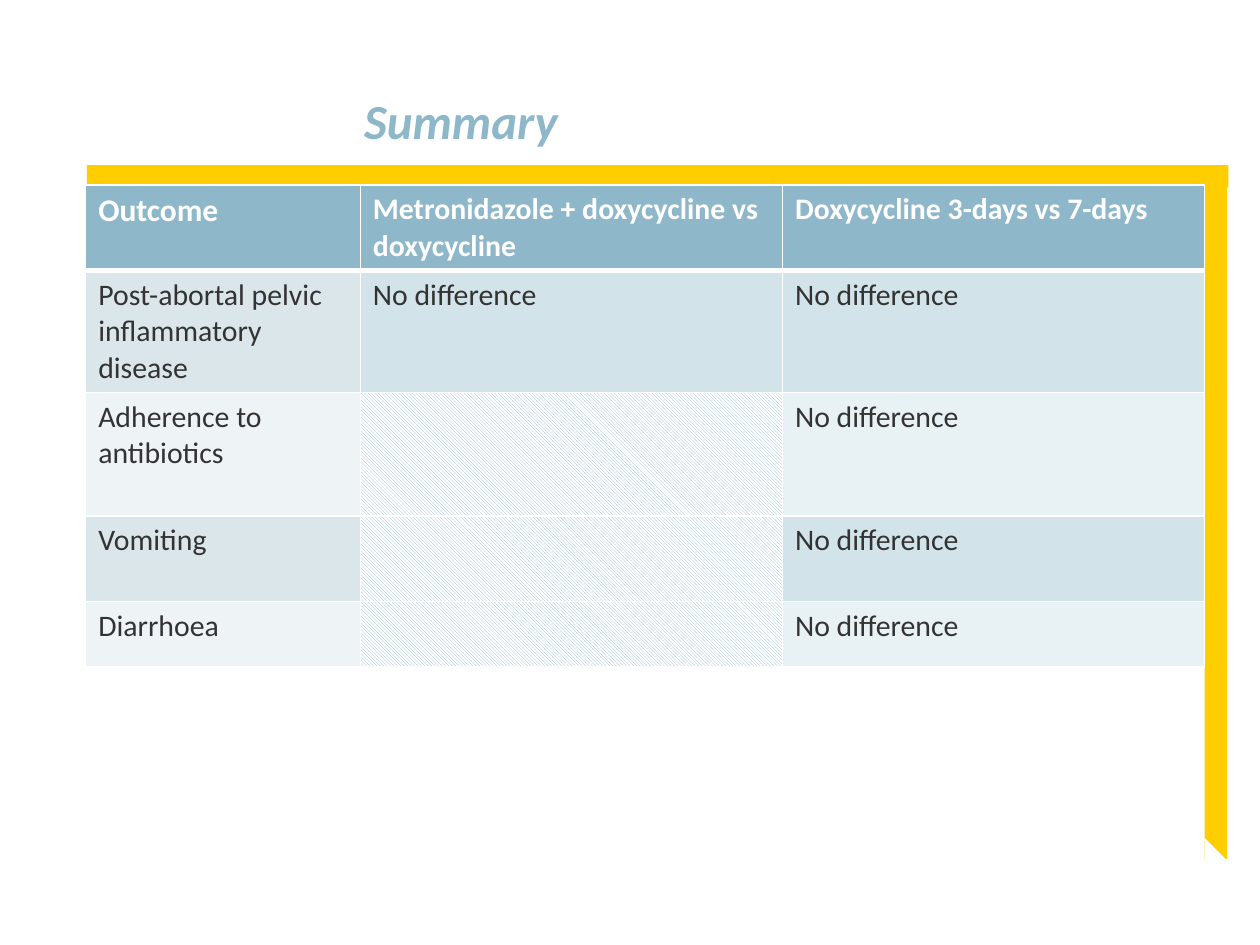
from lxml.etree import SubElement
from pptx import Presentation
from pptx.dml.color import RGBColor
from pptx.enum.dml import MSO_PATTERN as Pattern
from pptx.enum.shapes import MSO_SHAPE as Shape
from pptx.enum.text import MSO_ANCHOR as Anchor, MSO_AUTO_SIZE as AutoSize, PP_ALIGN as Align
from pptx.oxml.ns import qn
from pptx.util import Inches, Pt

COLORS = {
    "white": "FFFFFF", "yellow": "FFCE00", "blue": "8EB8C9", "text": "333333",
    "label_dark": "DBE6EB", "label_light": "EEF3F5",
    "value_dark": "D2E3E9", "value_light": "E8F1F4",
}
HEADERS = ["Outcome", "Metronidazole + doxycycline vs doxycycline", "Doxycycline 3-days vs 7-days"]
SAME = "No difference"
OUTCOMES = [
    ["Post-abortal pelvic inflammatory disease", SAME, SAME],
    ["Adherence to antibiotics", None, SAME],
    ["Vomiting", None, SAME],
    ["Diarrhoea", None, SAME],
]


class SlideBuilder:
    """Holds the style and the current slide, and adds each kind of element."""

    def __init__(self, deck, font="Calibri"):
        self.font = font
        self.slide = deck.slides.add_slide(deck.slide_layouts[5])

    def color(self, name):
        return RGBColor.from_string(COLORS[name])

    def style(self, para, size, color, bold=False, italic=False):
        font = para.font
        font.name, font.size, font.bold, font.italic = self.font, Pt(size), bold, italic
        font.color.rgb = self.color(color)

    def shape(self, kind, left, top, width, height, color):
        shape = self.slide.shapes.add_shape(
            kind, Inches(left), Inches(top), Inches(width), Inches(height))
        shape.shadow.inherit = False
        shape.fill.solid()
        shape.fill.fore_color.rgb = self.color(color)
        shape.line.fill.background()
        return shape

    def title(self, text, left, top, width, height):
        title = self.slide.shapes.title
        title.left, title.top = Inches(left), Inches(top)
        title.width, title.height = Inches(width), Inches(height)
        frame = title.text_frame
        frame.text = text
        frame.auto_size = AutoSize.NONE
        frame.vertical_anchor = Anchor.BOTTOM
        para = frame.paragraphs[0]
        para.alignment = Align.LEFT
        para.line_spacing = 0.9
        para._p.get_or_add_pPr().set("marL", str(Inches(0.26)))
        self.style(para, 28, "blue", bold=True, italic=True)

    def borders(self, cell, bottom=1):
        properties = cell._tc.get_or_add_tcPr()
        for side, width in {"L": 1, "R": 1, "T": 1, "B": bottom}.items():
            line = SubElement(properties, qn(f"a:ln{side}"), w=str(Pt(width)))
            fill = SubElement(line, qn("a:solidFill"))
            SubElement(fill, qn("a:srgbClr"), val=COLORS["white"])

    def cell(self, cell, text, fill, size=17, color="text", bold=False, bottom=1):
        self.borders(cell, bottom)
        if text is None:
            cell.fill.patterned()
            cell.fill.pattern = Pattern.DARK_DOWNWARD_DIAGONAL
            cell.fill.fore_color.rgb = self.color("blue")
            cell.fill.back_color.rgb = self.color("white")
            return
        cell.fill.solid()
        cell.fill.fore_color.rgb = self.color(fill)
        cell.text = text
        self.style(cell.text_frame.paragraphs[0], size, color, bold)

    def table(self, headers, rows, left, top, widths, heights):
        table = self.slide.shapes.add_table(
            len(heights), len(widths), Inches(left), Inches(top),
            Inches(sum(widths)), Inches(sum(heights))).table
        for column, width in zip(table.columns, widths):
            column.width = Inches(width)
        for row, height in zip(table.rows, heights):
            row.height = Inches(height)
        for index, text in enumerate(headers):
            size = 17 if index else 18
            self.cell(table.cell(0, index), text, "blue", size, "white", bold=True, bottom=3)
        for number, texts in enumerate(rows, start=1):
            shade = "dark" if number % 2 else "light"
            for index, text in enumerate(texts):
                kind = "value" if index else "label"
                self.cell(table.cell(number, index), text, f"{kind}_{shade}")


def main():
    deck = Presentation()
    deck.slide_width, deck.slide_height = Inches(10), Inches(7.5)
    builder = SlideBuilder(deck)
    builder.shape(Shape.RECTANGLE, 0.69, 1.31, 9.06, 0.18, "yellow")
    builder.shape(Shape.RECTANGLE, 9.56, 1.31, 0.18, 5.51, "yellow")
    corner = builder.shape(Shape.ISOSCELES_TRIANGLE, 9.56, 6.65, 0.18, 0.18, "white")
    corner.adjustments[0] = 0
    builder.title("Summary", 2.53, 0.2, 7.19, 1.04)
    builder.table(HEADERS, OUTCOMES, 0.68, 1.47,
                  widths=[2.18, 3.35, 3.35], heights=[0.42, 0.72, 0.98, 0.68, 0.52])
    deck.save("out.pptx")


if __name__ == "__main__":
    main()
